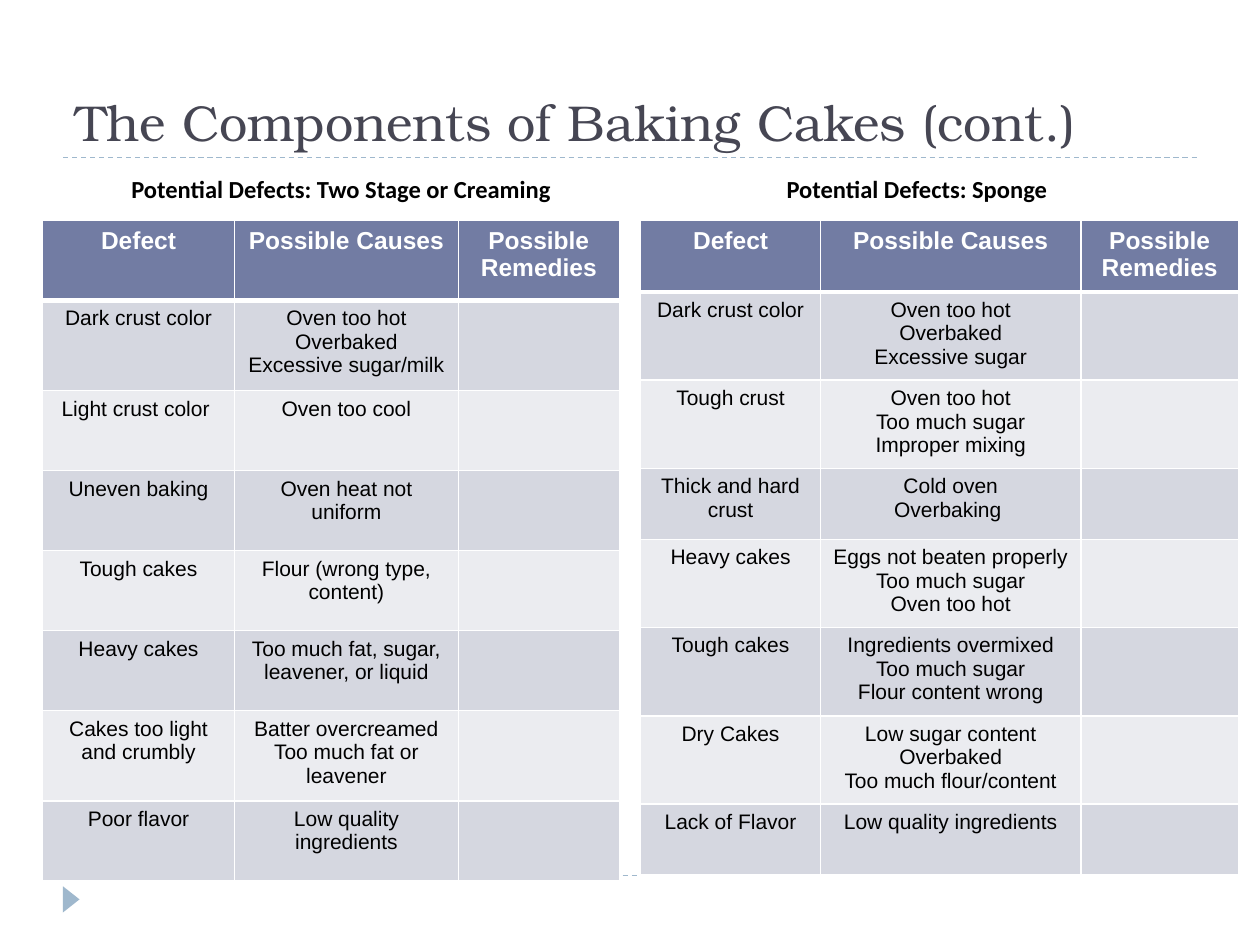
from lxml.etree import SubElement
from pptx import Presentation
from pptx.dml.color import RGBColor
from pptx.enum.dml import MSO_LINE
from pptx.enum.shapes import MSO_CONNECTOR, MSO_SHAPE
from pptx.enum.text import MSO_ANCHOR, PP_ALIGN
from pptx.oxml import parse_xml
from pptx.oxml.ns import nsdecls, qn
from pptx.util import Pt

WHITE = RGBColor(0xFF, 0xFF, 0xFF)
BLACK = RGBColor(0, 0, 0)
TITLE_INK = RGBColor(0x46, 0x46, 0x53)
ACCENT = RGBColor(0x9F, 0xB8, 0xCD)
HEADER_FILL = RGBColor(0x72, 0x7C, 0xA3)
BANDS = [RGBColor(0xD5, 0xD7, 0xE0), RGBColor(0xEB, 0xEC, 0xF0)]

HEADER = ("Defect", "Possible Causes", "Possible Remedies")
# Each row: defect, causes (one per line), remedies left open
CREAMING = [
    ("Dark crust color", "Oven too hot\nOverbaked\nExcessive sugar/milk", ""),
    ("Light crust color ", "Oven too cool", ""),
    ("Uneven baking", "Oven heat not uniform", ""),
    ("Tough cakes", "Flour (wrong type, content)", ""),
    ("Heavy cakes", "Too much fat, sugar, leavener, or liquid", ""),
    ("Cakes too light and crumbly", "Batter overcreamed\nToo much fat or leavener", ""),
    ("Poor flavor", "Low quality ingredients", ""),
]
SPONGE = [
    ("Dark crust color", "Oven too hot\nOverbaked\nExcessive sugar", ""),
    ("Tough crust", "Oven too hot\nToo much sugar\nImproper mixing", ""),
    ("Thick and hard crust", "Cold oven\nOverbaking ", ""),
    ("Heavy cakes", "Eggs not beaten properly\nToo much sugar\nOven too hot", ""),
    ("Tough cakes", "Ingredients overmixed\nToo much sugar\nFlour content wrong", ""),
    ("Dry Cakes", "Low sugar content\nOverbaked\nToo much flour/content", ""),
    ("Lack of Flavor", "Low quality ingredients", ""),
]


def add_span(para, text, font, size, color, bold=False):
    span = para.add_run()
    span.text = text
    span.font.name = font
    span.font.size = Pt(size)
    span.font.color.rgb = color
    span.font.bold = bold


def add_text_box(page, box, text, font, size, color, bold=False,
                 align=PP_ALIGN.LEFT, anchor=MSO_ANCHOR.TOP, before=0):
    frame = page.shapes.add_textbox(*map(Pt, box)).text_frame
    frame.word_wrap = True
    frame.vertical_anchor = anchor
    para = frame.paragraphs[0]
    para.alignment = align
    para.space_before = Pt(before)
    add_span(para, text, font, size, color, bold)


def add_frame(page, box):
    """Dashed rules at the top and bottom of the box, and the corner marker."""
    left, top, width, height = box
    for y in (top + height, top):
        rule = page.shapes.add_connector(
            MSO_CONNECTOR.STRAIGHT, Pt(left), Pt(y), Pt(left + width), Pt(y))
        rule.line.color.rgb = ACCENT
        rule.line.width = Pt(0.75)
        rule.line.dash_style = MSO_LINE.DASH
        SubElement(rule._element.spPr, qn("a:effectLst"))
    marker = page.shapes.add_shape(
        MSO_SHAPE.ISOSCELES_TRIANGLE, Pt(left - 2.8), Pt(top + height + 8.8), Pt(15), Pt(9.5))
    marker.rotation = 90
    marker.shadow.inherit = False
    marker.fill.solid()
    marker.fill.fore_color.rgb = ACCENT
    marker.line.fill.background()


def set_borders(cell, top, bottom):
    """White borders; they must come before the fill in the cell properties."""
    properties = cell._tc.get_or_add_tcPr()
    for place, (side, width) in enumerate(
            [("L", 1), ("R", 1), ("T", top), ("B", bottom)]):
        properties.insert(place, parse_xml(
            f'<a:ln{side} {nsdecls("a")} w="{Pt(width)}"><a:solidFill>'
            f'<a:srgbClr val="{WHITE}"/></a:solidFill></a:ln{side}>'))


def add_defect_table(page, box, widths, heights, rows):
    rows = [HEADER] + rows
    table = page.shapes.add_table(len(rows), len(HEADER), *map(Pt, box)).table
    for column, width in zip(table.columns, widths):
        column.width = Pt(width)
    for r, (row, height) in enumerate(zip(rows, heights)):
        table.rows[r].height = Pt(height)
        header = r == 0
        for c, text in enumerate(row):
            cell = table.cell(r, c)
            cell.fill.solid()
            cell.fill.fore_color.rgb = HEADER_FILL if header else BANDS[(r - 1) % 2]
            set_borders(cell, top=3 if r == 1 else 1, bottom=3 if header else 1)
            for i, line in enumerate(text.split("\n") if text else []):
                frame = cell.text_frame
                para = frame.add_paragraph() if i else frame.paragraphs[0]
                para.alignment = PP_ALIGN.CENTER
                add_span(para, line, "Arial", 14 if header else 12,
                         WHITE if header else BLACK, header)


def add_defects(page, box, heading, table_box, widths, heights, rows):
    """A heading centred in its column, with the table of defects."""
    add_text_box(page, box, heading, "Calibri", 14, BLACK, True,
                 PP_ALIGN.CENTER, before=6)
    add_defect_table(page, table_box, widths, heights, rows)


def main():
    deck = Presentation()
    deck.slide_width, deck.slide_height = Pt(720), Pt(540)
    page = deck.slides.add_slide(deck.slide_layouts[6])

    # Rules, marker and title
    add_frame(page, (36, 90, 648, 410.4))
    add_text_box(page, (36, 18, 648, 72), "The Components of Baking Cakes (cont.)",
                 "TeX Gyre Bonum", 28.8, TITLE_INK, anchor=MSO_ANCHOR.BOTTOM)

    # Left: two stage or creaming
    add_defects(page, (36, 95.8, 318, 388.8), "Potential Defects: Two Stage or Creaming",
                (24.3, 126, 329.7, 378), (109.8, 127.8, 92.1),
                (45.7, 51.6) + (45.7,) * 4 + (51.6, 45.7), CREAMING)

    # Right: sponge
    add_defects(page, (365, 95.8, 318, 388.8), "Potential Defects: Sponge",
                (366, 126, 342, 373.7), (103, 148.6, 90.2),
                (40.5, 48.7, 48.7, 40.5, 48.7, 48.7, 48.7, 40.5), SPONGE)

    deck.save("out.pptx")


if __name__ == "__main__":
    main()
